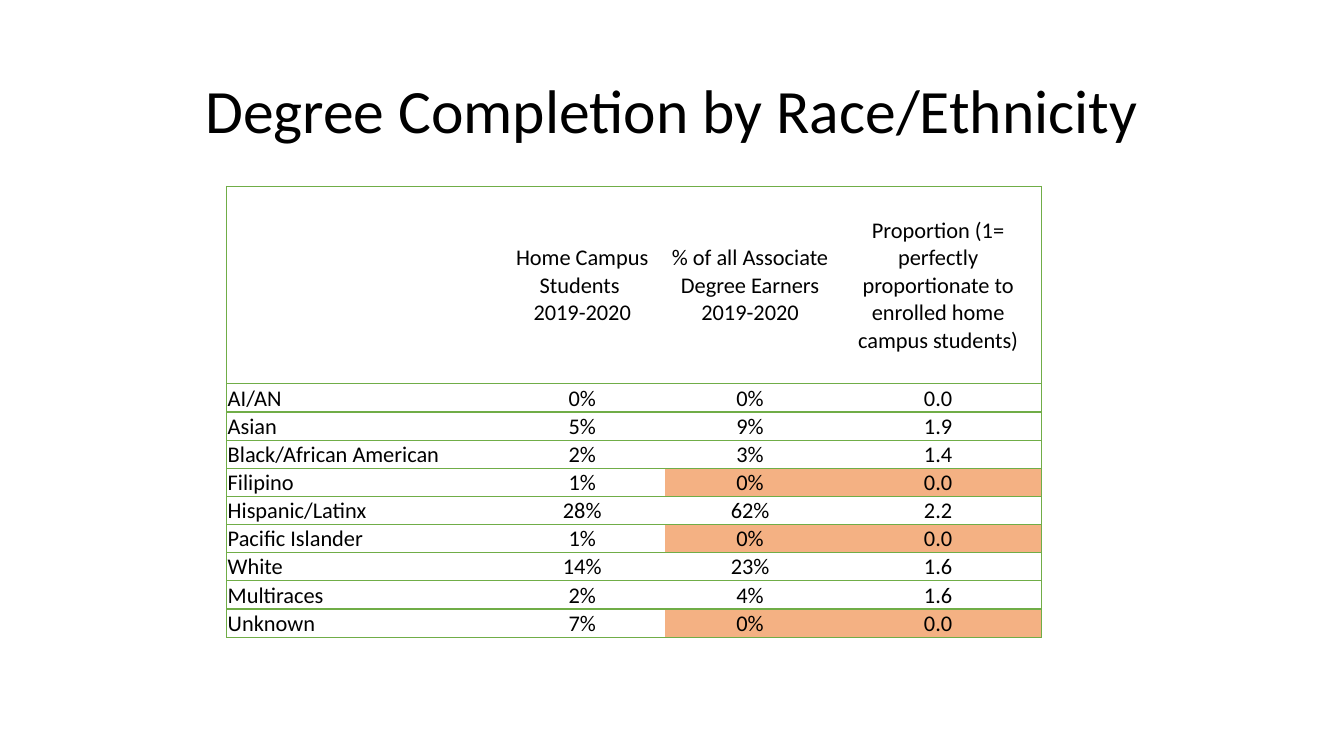
import pptx
import pptx.util
import pptx.dml.color
import pptx.enum.text
import lxml.etree

Pt = pptx.util.Pt
ALIGN = pptx.enum.text.PP_ALIGN
ANCHOR = pptx.enum.text.MSO_ANCHOR

COLORS = {"text": "000000", "plain": "FFFFFF", "flagged": "F4B183", "rule": "70AD47"}
FONT = "Calibri"
HEADINGS = [
    [],
    ["Home Campus Students ", "2019-2020"],
    ["% of all Associate Degree Earners", "2019-2020"],
    ["Proportion (1= perfectly proportionate to enrolled home campus students)"],
]
COMPLETION = [
    ("AI/AN", "0%", "0%", "0.0"),
    ("Asian", "5%", "9%", "1.9"),
    ("Black/African American", "2%", "3%", "1.4"),
    ("Filipino", "1%", "0%", "0.0"),
    ("Hispanic/Latinx", "28%", "62%", "2.2"),
    ("Pacific Islander", "1%", "0%", "0.0"),
    ("White", "14%", "23%", "1.6"),
    ("Multiraces", "2%", "4%", "1.6"),
    ("Unknown", "7%", "0%", "0.0"),
]
FLAGGED_GROUPS = {"Filipino", "Pacific Islander", "Unknown"}
COLUMN_SHARES = [2.7, 1.65, 1.68, 2.05]
HEADER_HEIGHT = 141


def rgb(name):
    return pptx.dml.color.RGBColor.from_string(COLORS[name])


def write(frame, lines, size, align, spacing=None):
    for index, line in enumerate(lines):
        paragraph = frame.paragraphs[0] if index == 0 else frame.add_paragraph()
        paragraph.alignment = align
        paragraph.line_spacing = spacing
        run = paragraph.add_run()
        run.text = line
        run.font.size = Pt(size)
        run.font.name = FONT
        run.font.color.rgb = rgb("text")


def set_borders(cell, ruled_sides):
    properties = cell._tc.get_or_add_tcPr()
    ns = "{http://schemas.openxmlformats.org/drawingml/2006/main}"
    for side in "LRTB":
        line = lxml.etree.SubElement(properties, f"{ns}ln{side}", w=str(Pt(1)))
        if side in ruled_sides:
            fill = lxml.etree.SubElement(line, f"{ns}solidFill")
            lxml.etree.SubElement(fill, f"{ns}srgbClr", val=COLORS["rule"])
        else:
            lxml.etree.SubElement(line, f"{ns}noFill")


def add_title(slide, left, top, width, height):
    title = slide.shapes.add_textbox(Pt(left), Pt(top), Pt(width), Pt(height))
    frame = title.text_frame
    frame.word_wrap = True
    frame.vertical_anchor = ANCHOR.MIDDLE
    write(frame, ["Degree Completion by Race/Ethnicity"], 44, ALIGN.CENTER, 0.9)


def style_cell(cell, lines, column, is_header, flagged):
    cell.margin_left = cell.margin_right = cell.margin_top = Pt(0.7)
    cell.margin_bottom = Pt(0)
    cell.vertical_anchor = ANCHOR.MIDDLE if is_header else ANCHOR.BOTTOM
    # Rules run across every row, with verticals only at the outer edges
    outer_side = {0: "L", len(HEADINGS) - 1: "R"}.get(column, "")
    set_borders(cell, "TB" + outer_side)
    cell.fill.solid()
    cell.fill.fore_color.rgb = rgb("flagged" if flagged else "plain")
    write(cell.text_frame, lines, 16, ALIGN.CENTER if column else ALIGN.LEFT)


def add_completion_table(slide, left, top, width, height):
    rows = [HEADINGS] + [[[value] for value in group] for group in COMPLETION]
    table = slide.shapes.add_table(
        len(rows), len(HEADINGS), Pt(left), Pt(top), Pt(width), Pt(height)).table
    table.first_row = table.horz_banding = False

    # Column widths and row heights
    for column, share in zip(table.columns, COLUMN_SHARES):
        column.width = Pt(width * share / sum(COLUMN_SHARES))
    group_height = (height - HEADER_HEIGHT) / len(COMPLETION)
    for index, row in enumerate(table.rows):
        row.height = Pt(group_height if index else HEADER_HEIGHT)

    # Cells
    for r, values in enumerate(rows):
        flagged_row = r > 0 and COMPLETION[r - 1][0] in FLAGGED_GROUPS
        for c, lines in enumerate(values):
            style_cell(table.cell(r, c), lines, c, r == 0, flagged_row and c >= 2)


def main():
    deck = pptx.Presentation()
    deck.slide_width, deck.slide_height = Pt(960), Pt(540)
    slide = deck.slides.add_slide(deck.slide_layouts[6])
    add_title(slide, 66, 28.75, 828, 104.4)
    add_completion_table(slide, 162, 133.2, 582, 322)
    deck.save("out.pptx")


if __name__ == "__main__":
    main()
